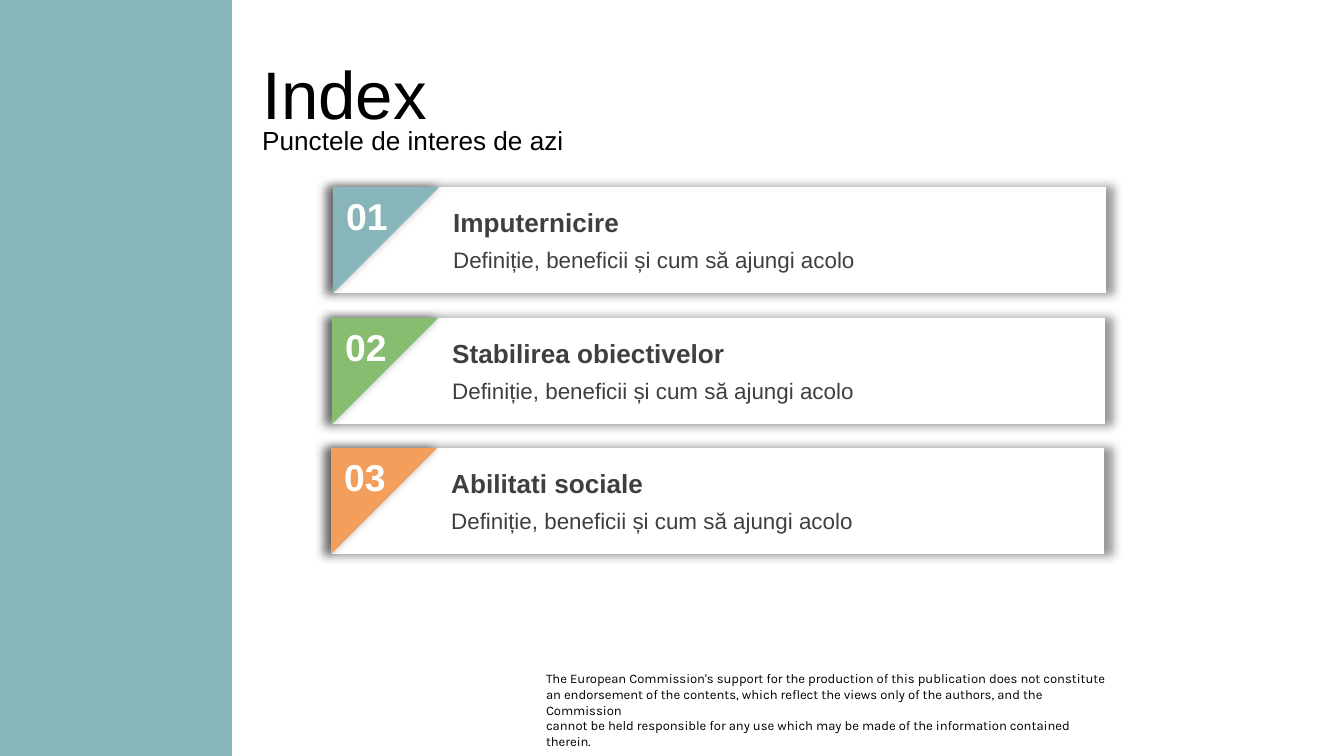
import dataclasses

import lxml.etree
import pptx
import pptx.dml.color
import pptx.enum.shapes
import pptx.enum.text
import pptx.oxml.ns
import pptx.shapes.autoshape
import pptx.slide
import pptx.util

EMU_PER_PX = 914400 / 134.4
SLIDE_WIDTH, SLIDE_HEIGHT = 1344, 756
CARD_WIDTH, CARD_HEIGHT = 773, 106
TEAL, GREEN, ORANGE = "87B5BA", "86BD70", "F39E5A"
WHITE, BLACK, GRAY = "FFFFFF", "000000", "3F3F3F"
RECTANGLE = pptx.enum.shapes.MSO_SHAPE.RECTANGLE
TRIANGLE = pptx.enum.shapes.MSO_SHAPE.RIGHT_TRIANGLE
TOP = pptx.enum.text.MSO_ANCHOR.TOP
MIDDLE = pptx.enum.text.MSO_ANCHOR.MIDDLE


@dataclasses.dataclass(frozen=True)
class Box:
    left: int
    top: int
    width: int
    height: int

    def emu(self) -> list[pptx.util.Emu]:
        return [px(length) for length in dataclasses.astuple(self)]


@dataclasses.dataclass(frozen=True)
class Topic:
    number: str
    heading: str
    color: str
    left: int
    top: int


TOPICS = [
    Topic("01", "Imputernicire", TEAL, 333, 187),
    Topic("02", "Stabilirea obiectivelor", GREEN, 332, 318),
    Topic("03", "Abilitati sociale", ORANGE, 331, 448),
]
DESCRIPTION = "Definiție, beneficii și cum să ajungi acolo"
DISCLAIMER = (
    "The European Commission's support for the production of this publication "
    "does not constitute an endorsement of the contents, which reflect the views "
    "only of the authors, and the Commission\n"
    "cannot be held responsible for any use which may be made of the information "
    "contained therein."
)


def px(length: int) -> pptx.util.Emu:
    return pptx.util.Emu(round(length * EMU_PER_PX))


def rgb(color: str) -> pptx.dml.color.RGBColor:
    return pptx.dml.color.RGBColor.from_string(color)


def write_text(shape: pptx.shapes.autoshape.Shape, text: str, *, size: int,
               color: str = BLACK, bold: bool = False, font: str = "Arial",
               anchor: pptx.enum.text.MSO_ANCHOR = TOP, inset: bool = True) -> None:
    frame = shape.text_frame
    frame.text = text
    frame.word_wrap = True
    frame.auto_size = pptx.enum.text.MSO_AUTO_SIZE.NONE
    frame.vertical_anchor = anchor
    frame.margin_left = frame.margin_right = pptx.util.Inches(0.1 if inset else 0)
    frame.margin_top = frame.margin_bottom = pptx.util.Inches(0.05 if inset else 0)
    for paragraph in frame.paragraphs:
        paragraph.alignment = pptx.enum.text.PP_ALIGN.LEFT
        paragraph.font.name = font
        paragraph.font.size = pptx.util.Pt(size)
        paragraph.font.bold = bold
        paragraph.font.color.rgb = rgb(color)


def add_text(slide: pptx.slide.Slide, box: Box, text: str, **text_format) -> None:
    write_text(slide.shapes.add_textbox(*box.emu()), text, **text_format)


def add_filled_shape(slide: pptx.slide.Slide, kind: pptx.enum.shapes.MSO_SHAPE,
                     box: Box, color: str) -> pptx.shapes.autoshape.Shape:
    shape = slide.shapes.add_shape(kind, *box.emu())
    shape.fill.solid()
    shape.fill.fore_color.rgb = rgb(color)
    shape.line.fill.background()
    shape.shadow.inherit = False
    return shape


def add_glow_shadow(shape: pptx.shapes.autoshape.Shape) -> None:
    qn = pptx.oxml.ns.qn
    effects = shape.element.spPr.find(qn("a:effectLst"))
    shadow = lxml.etree.SubElement(
        effects, qn("a:outerShdw"), blurRad=str(pptx.util.Pt(5)),
        sx="102000", sy="102000", algn="ctr", rotWithShape="0")
    color = lxml.etree.SubElement(shadow, qn("a:srgbClr"), val=BLACK)
    lxml.etree.SubElement(color, qn("a:alpha"), val="40000")


def add_topic(slide: pptx.slide.Slide, topic: Topic) -> None:
    left, top = topic.left, topic.top
    card = add_filled_shape(
        slide, RECTANGLE, Box(left, top, CARD_WIDTH, CARD_HEIGHT), WHITE)
    corner = add_filled_shape(
        slide, TRIANGLE, Box(left, top, CARD_HEIGHT, CARD_HEIGHT), topic.color)
    corner.rotation = 90
    add_glow_shadow(card)
    add_glow_shadow(corner)
    text_left = left + CARD_HEIGHT + 1
    add_text(slide, Box(left, top, 78, 59), topic.number, size=20, color=WHITE, bold=True)
    add_text(slide, Box(text_left, top + 13, 645, 46), topic.heading,
             size=14, color=GRAY, bold=True)
    add_text(slide, Box(text_left, top + 53, 645, 40), DESCRIPTION, size=12, color=GRAY)


def main() -> None:
    presentation = pptx.Presentation()
    presentation.slide_width = px(SLIDE_WIDTH)
    presentation.slide_height = px(SLIDE_HEIGHT)
    slide = presentation.slides.add_slide(presentation.slide_layouts[5])

    add_text(slide, Box(546, 671, 560, 47), DISCLAIMER, size=7, font="Karla", inset=False)
    add_filled_shape(slide, RECTANGLE, Box(0, 0, 232, SLIDE_HEIGHT), TEAL)

    title = slide.shapes.title
    title.left, title.top, title.width, title.height = Box(249, 50, 968, 85).emu()
    write_text(title, "Index", size=36, anchor=MIDDLE)
    add_text(slide, Box(249, 125, 968, 31), "Punctele de interes de azi",
             size=14, anchor=MIDDLE)

    for topic in TOPICS:
        add_topic(slide, topic)

    presentation.save("out.pptx")


if __name__ == "__main__":
    main()
